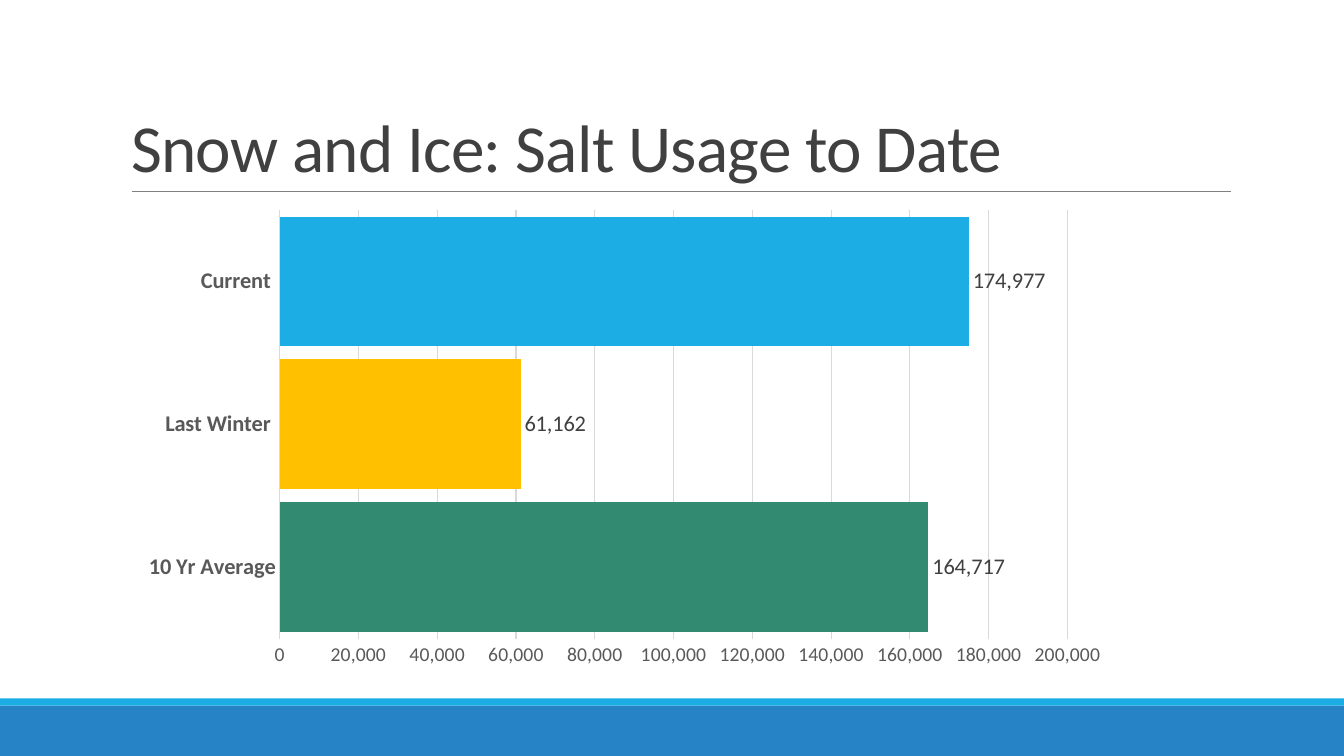
"""Build a slide with a bar chart of salt usage."""
from pptx import Presentation
from pptx import util as u
from pptx.chart import data
from pptx.dml import color
from pptx.enum import chart as ch, shapes, text
from pptx.oxml import ns, xmlchemy as xc


def rgb(code):
    return color.RGBColor.from_string(code)


def style(obj, opts):
    for key, val in opts.items():
        if key == "color":
            obj.color.rgb = rgb(val)
        else:
            setattr(obj, key, val)


deck = Presentation()
deck.slide_width, deck.slide_height = u.Inches(13.33), u.Inches(7.5)
wide = deck.slide_width
slide = deck.slides.add_slide(deck.slide_layouts[5])

for top, tall, tint in [(7, 0.5, "2683C6"), (6.93, 0.07, "1CADE4")]:
    band = slide.shapes.add_shape(
        shapes.MSO_SHAPE.RECTANGLE, 0, u.Inches(top), wide, u.Inches(tall))
    band.shadow.inherit = False
    band.fill.solid()
    band.fill.fore_color.rgb = rgb(tint)
    band.line.fill.background()

rule = slide.shapes.add_connector(
    shapes.MSO_CONNECTOR.STRAIGHT, u.Inches(1.31), u.Inches(1.9), u.Inches(12.21), u.Inches(1.9))
style(rule.line, {"color": "808080", "width": u.Pt(0.5)})
rule._element.spPr.append(xc.OxmlElement("a:effectLst"))

title = slide.shapes.title
style(title, {"left": u.Inches(1.2), "top": u.Inches(0.31),
              "width": u.Inches(11), "height": u.Inches(1.59)})
frame = title.text_frame
frame.text = "Snow and Ice: Salt Usage to Date"
style(frame, {"auto_size": text.MSO_AUTO_SIZE.NONE, "word_wrap": True,
              "vertical_anchor": text.MSO_ANCHOR.BOTTOM})
para = frame.paragraphs[0]
style(para, {"alignment": text.PP_ALIGN.LEFT, "line_spacing": 0.85})
run = para.runs[0]
style(run.font, {"name": "Calibri", "size": u.Pt(48), "color": "404040"})
run._r.get_or_add_rPr().set("spc", "-50")

usage = data.CategoryChartData(number_format="#,##0")
usage.categories = ["10 Yr Average", "Last Winter ", "Current "]
usage.add_series("Series 1", [164717, 61162, 174977])
chart = slide.shapes.add_chart(
    ch.XL_CHART_TYPE.BAR_CLUSTERED, u.Inches(1.28), u.Inches(1.99),
    u.Inches(9.83), u.Inches(4.72), usage).chart
style(chart, {"has_legend": False, "has_title": False})
style(chart.font, {"name": "Calibri", "size": u.Pt(10), "color": "000000"})

cats, vals = chart.category_axis, chart.value_axis
for axis, size, bold in [(cats, 16, True), (vals, 14, False)]:
    style(axis, {"major_tick_mark": ch.XL_TICK_MARK.NONE,
                 "minor_tick_mark": ch.XL_TICK_MARK.NONE})
    style(axis.tick_labels.font, {"name": "Calibri", "size": u.Pt(size),
                                  "bold": bold, "color": "595959"})
style(vals, {"minimum_scale": 0, "maximum_scale": 200000, "major_unit": 20000})
style(vals.tick_labels, {"number_format": "#,##0", "number_format_is_linked": False})
vals.format.line.fill.background()
for line in [cats.format.line, vals.major_gridlines.format.line]:
    style(line, {"color": "D9D9D9", "width": u.Pt(0.75)})

plot = chart.plots[0]
style(plot, {"gap_width": 10, "vary_by_categories": False, "has_data_labels": True})
style(plot.data_labels, {"show_value": True, "number_format": "#,##0",
                         "number_format_is_linked": False,
                         "position": ch.XL_LABEL_POSITION.OUTSIDE_END})
style(plot.data_labels.font, {"name": "Calibri", "size": u.Pt(16), "color": "404040"})
bars = plot.series[0]
for part, tint in [(bars, "1CADE4"), (bars.points[0], "328B71"), (bars.points[1], "FFC000")]:
    part.format.fill.solid()
    part.format.fill.fore_color.rgb = rgb(tint)

deck.save("out.pptx")
